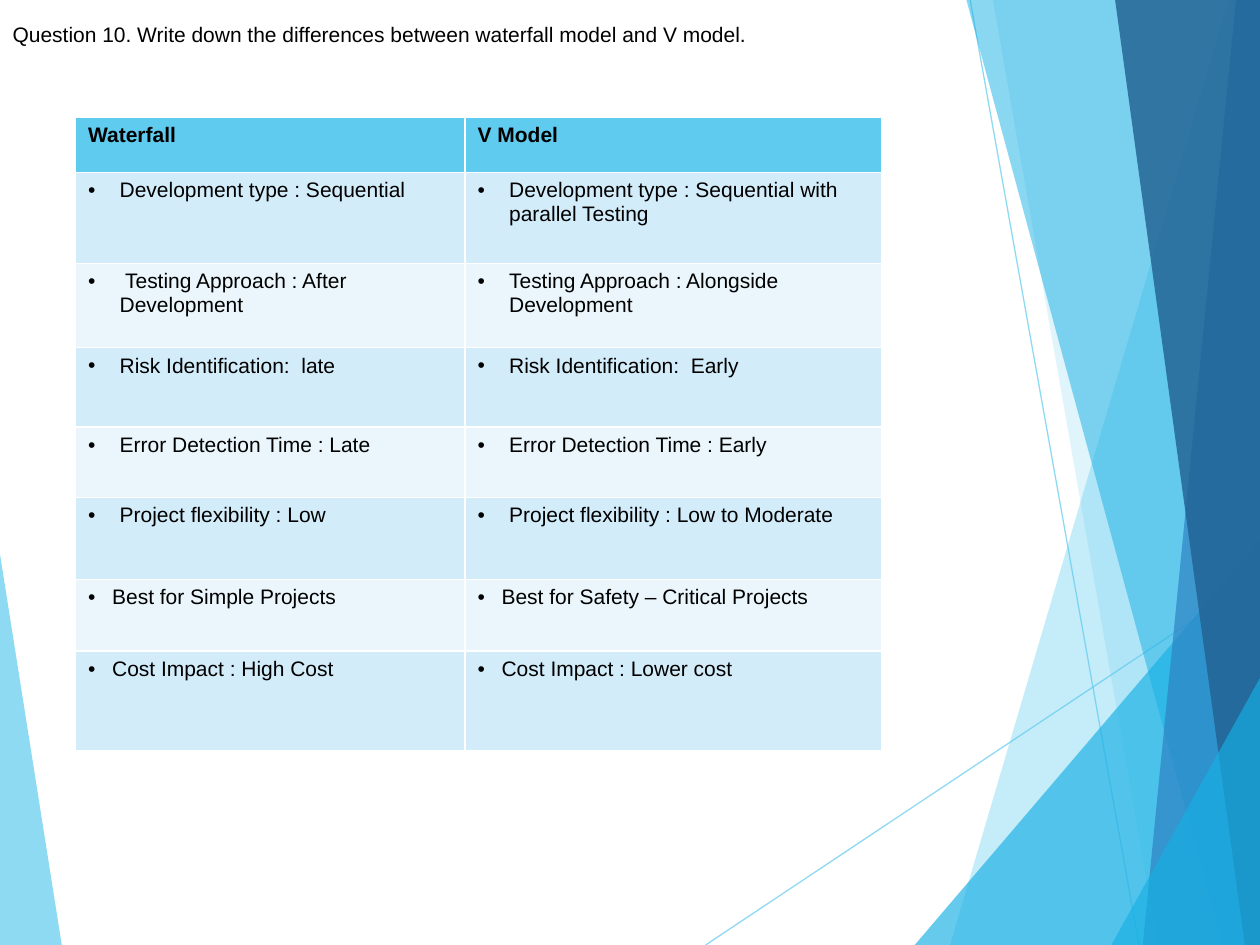
from pptx import Presentation
from pptx.dml.color import RGBColor
from pptx.enum.shapes import MSO_CONNECTOR
from pptx.enum.text import MSO_ANCHOR, PP_ALIGN
from pptx.oxml.ns import qn
from pptx.util import Inches, Pt
from lxml import etree

STRAIGHT = MSO_CONNECTOR.STRAIGHT
TOP = MSO_ANCHOR.TOP
LEFT = PP_ALIGN.LEFT

BLACK = RGBColor(0x00, 0x00, 0x00)
SKY = RGBColor(0x5F, 0xCB, 0xEF)
CYAN = RGBColor(0x17, 0xB0, 0xE4)
BLUE = RGBColor(0x2E, 0x83, 0xC3)
NAVY = RGBColor(0x22, 0x62, 0x92)
BAND_DARK = RGBColor(0xD2, 0xEC, 0xF9)
BAND_LIGHT = RGBColor(0xEA, 0xF6, 0xFC)

FONT = "Arial"
TITLE_ONLY = 5
WIDTH, HEIGHT = 10, 7.5

QUESTION = "Question 10. Write down the differences between waterfall model and V model."
HEADERS = ("Waterfall", "V Model")
# Row height, bullet indent, waterfall text, V model text
COMPARISON = [
    (0.72, 0.25, "Development type : Sequential",
     "Development type : Sequential with parallel Testing"),
    (0.67, 0.25, " Testing Approach : After Development",
     "Testing Approach : Alongside Development"),
    (0.63, 0.25, "Risk Identification:  late", "Risk Identification:  Early"),
    (0.56, 0.25, "Error Detection Time : Late", "Error Detection Time : Early"),
    (0.65, 0.25, "Project flexibility : Low", "Project flexibility : Low to Moderate"),
    (0.57, 0.19, "Best for Simple Projects", "Best for Safety – Critical Projects"),
    (0.79, 0.19, "Cost Impact : High Cost", "Cost Impact : Lower cost"),
]
HEADER_HEIGHT = 0.44
COLUMN_SHARES = (0.483, 0.517)


def set_opacity(color_format_parent, percent):
    """Make the solid colour below the given XML element partly transparent."""
    color = color_format_parent.find(".//" + qn("a:srgbClr"))
    etree.SubElement(color, qn("a:alpha")).set("val", str(percent * 1000))


def add_facet(slide, left, top, points, color, opacity):
    corners = [(Inches(left + x), Inches(top + y)) for x, y in points]
    builder = slide.shapes.build_freeform(*corners[0])
    builder.add_line_segments(corners[1:], close=True)
    shape = builder.convert_to_shape()
    shape.shadow.inherit = False
    shape.fill.solid()
    shape.fill.fore_color.rgb = color
    set_opacity(shape.fill._xPr, opacity)
    shape.line.fill.background()


def add_thin_line(slide, left, top, start, end):
    connector = slide.shapes.add_connector(
        STRAIGHT, Inches(left + start[0]), Inches(top + start[1]),
        Inches(left + end[0]), Inches(top + end[1]))
    connector.line.color.rgb = SKY
    connector.line.width = Pt(0.75)
    properties = connector.line._get_or_add_ln()
    set_opacity(properties, 70)
    etree.SubElement(properties.getparent(), qn("a:effectLst"))


def add_left_wedge(slide, left, top, width, height):
    add_facet(slide, left, top, [(0, 0), (width, height), (0, height)], SKY, 70)


def add_right_facets(slide, left, top, width, height):
    """Overlapping panels, each reaching from a slanted edge to the right side."""
    add_thin_line(slide, left, top, (0, height), (width, 4.57))
    add_thin_line(slide, left, top, (2.1, 0), (3.44, height))

    def panel(top_x, bottom_x, color, opacity):
        add_facet(slide, left, top, [(top_x, 0), (bottom_x, height),
                                     (width, height), (width, 0)], color, opacity)

    def corner(bottom_x, right_y, color, opacity):
        add_facet(slide, left, top, [(bottom_x, height), (width, right_y),
                                     (width, height)], color, opacity)

    panel(4.15, 1.94, SKY, 36)
    panel(2.28, 3.59, SKY, 20)
    corner(1.66, 4.29, CYAN, 66)
    panel(2.07, 4.1, CYAN, 50)
    panel(4.21, 3.47, BLUE, 70)
    panel(3.25, 4.28, NAVY, 82)
    corner(3.22, 5.38, CYAN, 66)


def add_text(paragraph, text, bold=False):
    paragraph.alignment = LEFT
    run = paragraph.add_run()
    run.text = text
    run.font.name = FONT
    run.font.size = Pt(12)
    run.font.bold = bold
    run.font.color.rgb = BLACK


def add_bullet(paragraph, indent):
    properties = paragraph._p.get_or_add_pPr()
    properties.set("marL", str(Inches(indent)))
    properties.set("indent", str(-Inches(indent)))
    etree.SubElement(properties, qn("a:buFont")).set("typeface", FONT)
    etree.SubElement(properties, qn("a:buChar")).set("char", "•")


def fill_cell(cell, text, color, indent=None):
    cell.fill.solid()
    cell.fill.fore_color.rgb = color
    paragraph = cell.text_frame.paragraphs[0]
    add_text(paragraph, text, bold=indent is None)
    if indent is not None:
        add_bullet(paragraph, indent)


def add_comparison_table(slide, left, top, width, height):
    table = slide.shapes.add_table(
        len(COMPARISON) + 1, len(HEADERS), Inches(left), Inches(top),
        Inches(width), Inches(height)).table
    for column, share in zip(table.columns, COLUMN_SHARES):
        column.width = Inches(width * share)
    table.rows[0].height = Inches(HEADER_HEIGHT)
    for column, header in enumerate(HEADERS):
        fill_cell(table.cell(0, column), header, SKY)
    for row, (row_height, indent, *texts) in enumerate(COMPARISON, start=1):
        table.rows[row].height = Inches(row_height)
        band = BAND_DARK if row % 2 else BAND_LIGHT
        for column, text in enumerate(texts):
            fill_cell(table.cell(row, column), text, band, indent)


def place_question(slide, left, top, width, height):
    title = slide.shapes.title
    title.left, title.top = Inches(left), Inches(top)
    title.width, title.height = Inches(width), Inches(height)
    frame = title.text_frame
    frame.word_wrap = True
    frame.vertical_anchor = TOP
    add_text(frame.paragraphs[0], QUESTION)


def main():
    presentation = Presentation()
    presentation.slide_width = Inches(WIDTH)
    presentation.slide_height = Inches(HEIGHT)
    slide = presentation.slides.add_slide(presentation.slide_layouts[TITLE_ONLY])
    add_left_wedge(slide, 0, 4.4, 0.49, 3.1)
    add_right_facets(slide, 5.6, 0, 4.4, HEIGHT)
    add_comparison_table(slide, 0.6, 0.93, 6.4, 5.03)
    place_question(slide, 0, 0.12, 7.59, 0.5)
    presentation.save("out.pptx")


if __name__ == "__main__":
    main()
